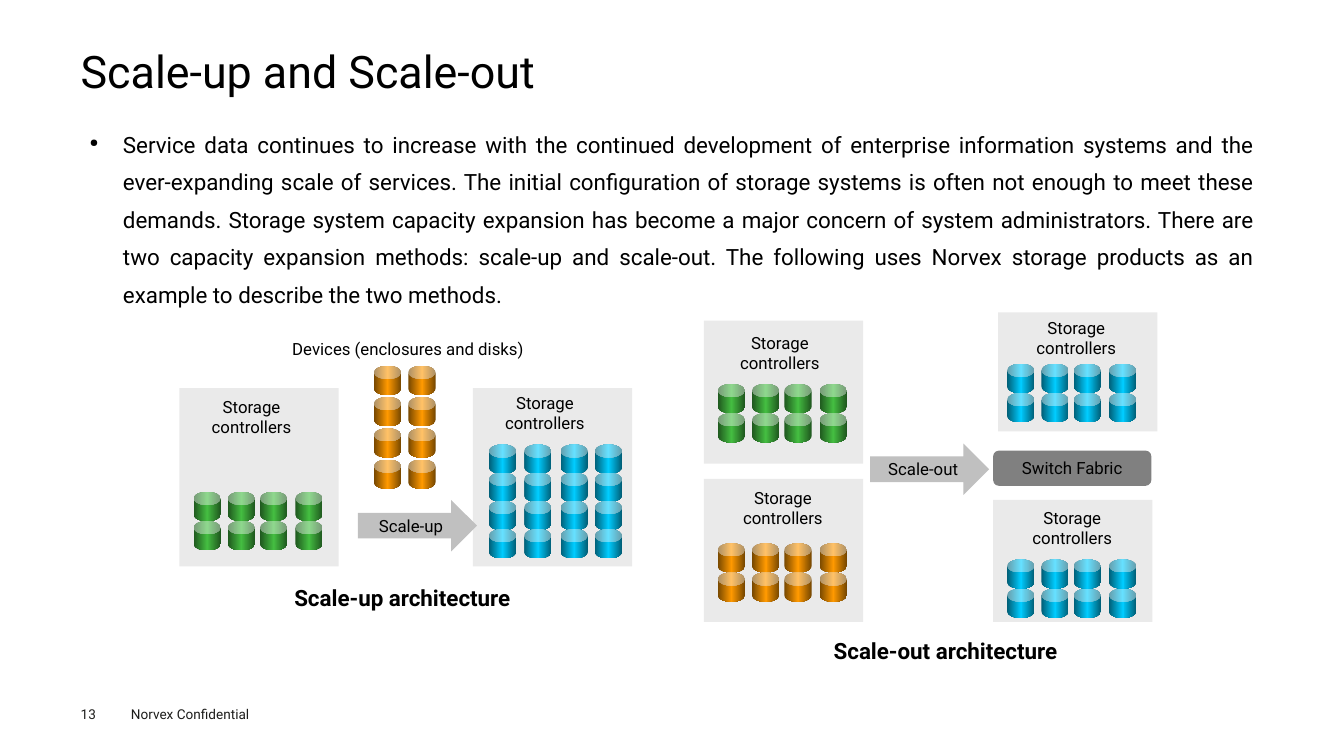
from lxml import etree
from pptx import Presentation
from pptx.dml.color import RGBColor
from pptx.enum.shapes import MSO_SHAPE
from pptx.enum.text import MSO_ANCHOR, PP_ALIGN
from pptx.oxml.ns import qn
from pptx.util import Inches, Pt

RECT, ROUND = MSO_SHAPE.RECTANGLE, MSO_SHAPE.ROUNDED_RECTANGLE
CAN, ARROW = MSO_SHAPE.CAN, MSO_SHAPE.RIGHT_ARROW
LEFT, CENTER, JUST = PP_ALIGN.LEFT, PP_ALIGN.CENTER, PP_ALIGN.JUSTIFY
TOP, MIDDLE = MSO_ANCHOR.TOP, MSO_ANCHOR.MIDDLE

HEX = {"black": "000000", "foot": "1D1D1B", "panel": "EAEAEA",
       "arrow": "C0C0C0", "fabric": "808080"}
SHADES = {"blue": ("005E76", "00CCFF"), "green": ("1F571E", "44BD41"),
          "orange": ("764700", "FF9900")}
FOUR = (0, 0.34, 0.66, 1.01)
WIDE = (0, 0.35, 0.71, 1.05)
PAIR = (0, 0.34)
BODY = (
    "Service data continues to increase with the continued development of "
    "enterprise information systems and the ever-expanding scale of services. "
    "The initial configuration of storage systems is often not enough to meet "
    "these demands. Storage system capacity expansion has become a major "
    "concern of system administrators. There are two capacity expansion "
    "methods: scale-up and scale-out. The following uses Norvex storage "
    "products as an example to describe the two methods."
)


def write(frame, text, size=12, color="black", bold=False, align=LEFT,
          anchor=TOP, inset=(0.1, 0.05), space=None, bullet=False):
    """Fill a text frame with one formatted paragraph."""
    frame.word_wrap = True
    frame.vertical_anchor = anchor
    frame.margin_left = frame.margin_right = Inches(inset[0])
    frame.margin_top = frame.margin_bottom = Inches(inset[1])
    para = frame.paragraphs[0]
    para.alignment = align
    if space:
        para.line_spacing = space
    if bullet:
        props = para._p.get_or_add_pPr()
        props.set("marL", str(Inches(0.33)))
        props.set("indent", str(Inches(-0.33)))
        etree.SubElement(props, qn("a:buSzPct"), val="50000")
        etree.SubElement(props, qn("a:buChar"), char="●")
    run = para.add_run()
    run.text = text
    run.font.name = "Roboto"
    run.font.size = Pt(size)
    run.font.bold = bold
    run.font.color.rgb = RGBColor.from_string(HEX[color])


class Deck:
    """Hold the style and the current slide."""

    def __init__(self):
        """Start a wide presentation with one blank slide."""
        self.show = Presentation()
        self.show.slide_width = Inches(13.33)
        self.show.slide_height = Inches(7.5)
        self.slide = self.show.slides.add_slide(self.show.slide_layouts[6])

    def text(self, words, x, y, w, h, **style):
        """Add a text box."""
        box = self.slide.shapes.add_textbox(*map(Inches, (x, y, w, h)))
        write(box.text_frame, words, **style)

    def shape(self, kind, x, y, w, h, color=None, words=None):
        """Add a plain shape, with centred words if given."""
        item = self.slide.shapes.add_shape(kind, *map(Inches, (x, y, w, h)))
        item.shadow.inherit = False
        item.line.fill.background()
        if color:
            item.fill.solid()
            item.fill.fore_color.rgb = RGBColor.from_string(HEX[color])
        if words:
            write(item.text_frame, words, align=CENTER, anchor=MIDDLE)
        return item

    def disk(self, x, y, shade):
        """Add one disk with a dark-light-dark gradient."""
        can = self.shape(CAN, x, y, 0.27, 0.29)
        can.adjustments[0] = 0.48
        edge, core = SHADES[shade]
        can.fill.gradient()
        can.fill.gradient_angle = 0
        stops = can._element.spPr.find(qn("a:gradFill")).find(qn("a:gsLst"))
        for stop in list(stops):
            stops.remove(stop)
        for pos, color in ((0, edge), (50000, core), (100000, edge)):
            stop = etree.SubElement(stops, qn("a:gs"), pos=str(pos))
            etree.SubElement(stop, qn("a:srgbClr"), val=color)

    def disks(self, x, y, shade, cols=FOUR, rows=2, step=0.29):
        """Add a grid of disks."""
        for row in range(rows):
            for col in cols:
                self.disk(x + col, y + row * step, shade)

    def panel(self, x, y, h, label):
        """Add a grey panel and its label at the given offset."""
        self.shape(RECT, x, y, 1.58, h, "panel")
        self.text("Storage controllers", x + label[0], y + label[1],
                  1.35, 0.5, align=CENTER)


def main():
    """Build the slide and save it."""
    deck = Deck()
    deck.text("Norvex Confidential", 1.2, 6.95, 1.6, 0.27,
              size=9.7, color="foot")
    deck.text("13", 0.8, 7, 0.55, 0.16, size=9.7, color="foot", inset=(0, 0))
    deck.text("Scale-up and Scale-out", 0.8, 0.49, 11.73, 0.54,
              size=32, inset=(0, 0), space=0.9)
    deck.text(BODY, 0.8, 1.15, 11.73, 5.33, size=16, align=JUST,
              inset=(0.09, 0.04), space=1.4, bullet=True)

    for x, y, h, label in (
        (1.78, 3.85, 1.77, (0.04, 0.04)),
        (4.69, 3.85, 1.77, (0.04, 0)),
        (6.98, 3.18, 1.42, (0.08, 0.07)),
        (6.98, 4.75, 1.42, (0.11, 0.04)),
        (9.9, 3.1, 1.18, (0.1, 0)),
        (9.85, 4.96, 1.21, (0.11, 0.03)),
    ):
        deck.panel(x, y, h, label)

    deck.disks(1.92, 4.88, "green")
    deck.disks(3.71, 3.63, "orange", cols=PAIR, rows=4, step=0.31)
    deck.disks(4.85, 4.41, "blue", cols=WIDE, rows=4, step=0.28)
    for x, y, shade in ((7.12, 3.81, "green"), (7.12, 5.39, "orange"),
                        (9.99, 3.61, "blue"), (9.99, 5.55, "blue")):
        deck.disks(x, y, shade)

    deck.shape(ARROW, 3.55, 4.96, 1.18, 0.51, "arrow", "Scale-up")
    deck.shape(ARROW, 8.63, 4.4, 1.18, 0.51, "arrow", "Scale-out")
    deck.shape(ROUND, 9.85, 4.47, 1.57, 0.35, "fabric", "Switch Fabric")

    deck.text("Devices (enclosures and disks)", 2.8, 3.31, 2.65, 0.3)
    deck.text("Scale-up architecture", 2.82, 5.75, 2.51, 0.37,
              size=16, bold=True)
    deck.text("Scale-out architecture", 8.17, 6.27, 2.6, 0.37,
              size=16, bold=True)
    deck.show.save("out.pptx")


if __name__ == "__main__":
    main()
